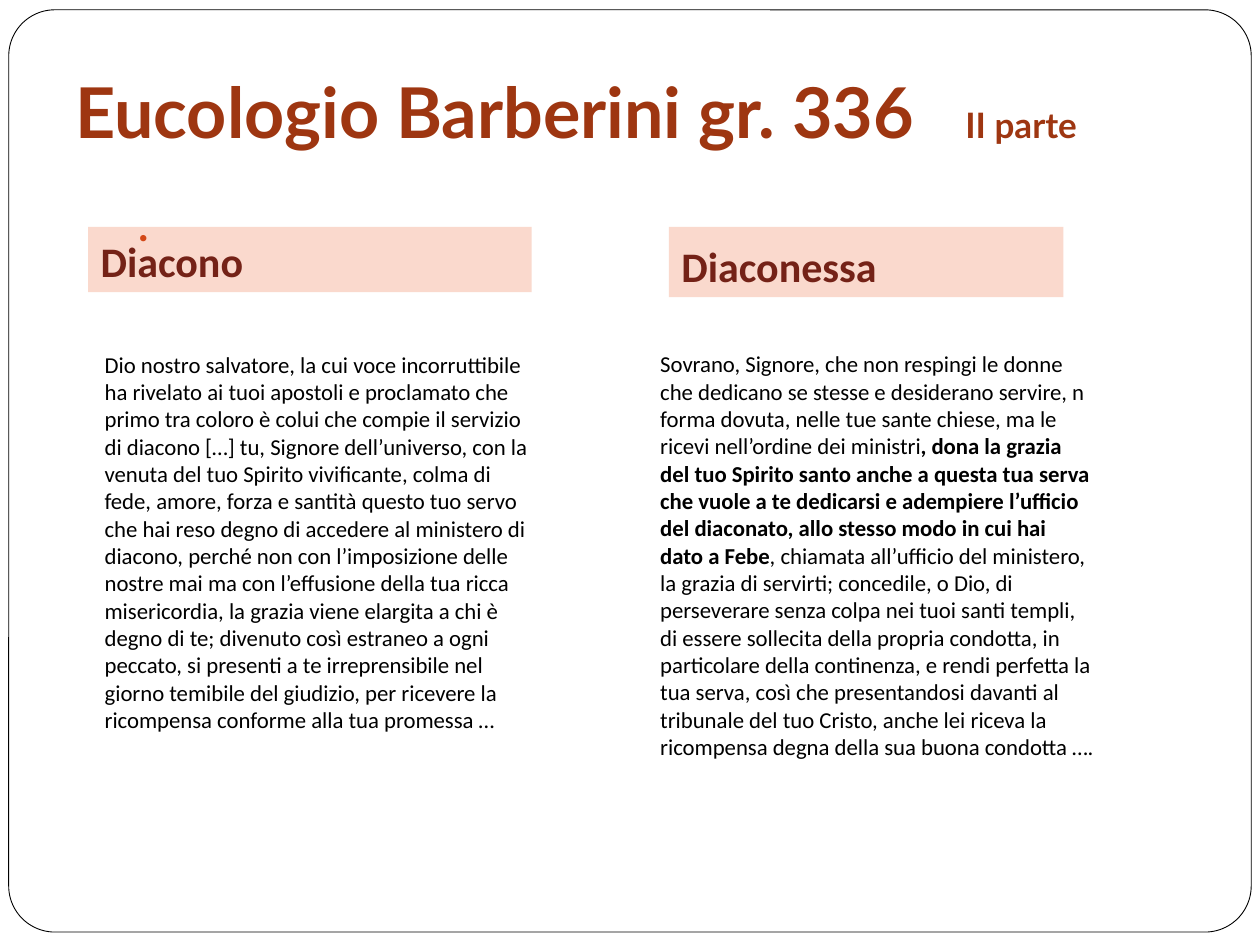
from dataclasses import dataclass

from lxml.etree import SubElement
from pptx import Presentation
from pptx.dml.color import RGBColor
from pptx.enum.shapes import MSO_SHAPE
from pptx.enum.text import MSO_ANCHOR, PP_ALIGN
from pptx.oxml.ns import qn
from pptx.util import Pt

COLORS = {
    "white": "FFFFFF",
    "black": "000000",
    "title": "9E3611",
    "heading": "742217",
    "band": "FAD9CD",
    "dot": "D34817",
}


@dataclass(frozen=True)
class Box:
    left: float
    top: float
    width: float
    height: float

    def lengths(self) -> list:
        return [Pt(v) for v in (self.left, self.top, self.width, self.height)]


@dataclass(frozen=True)
class Style:
    size: float
    color: str
    font: str = "Calibri"
    bold: bool | None = None


@dataclass(frozen=True)
class Run:
    text: str
    bold: bool | None = None
    size: float | None = None


@dataclass(frozen=True)
class Prayer:
    heading: str
    band: Box
    body: Box
    runs: list[Run]


TITLE = Style(40, "title", "Lato", True)
HEADING = Style(24, "heading", bold=True)
BODY = Style(13, "black")
DOT = Style(24, "dot", "Lato", True)

PRAYERS = [
    Prayer("Diacono", Box(50.4, 129.6, 253.4, 37.4), Box(31, 196.6, 283.7, 317.5), [
        Run("Dio nostro salvatore, la cui voce incorruttibile ha rivelato ai tuoi apostoli "
            "e proclamato che primo tra coloro è colui che compie il servizio di diacono […] "
            "tu, Signore dell’universo, con la venuta del tuo Spirito vivificante, colma di "
            "fede, amore, forza e santità questo tuo servo che hai reso degno di accedere al "
            "ministero di diacono, perché non con l’imposizione delle nostre mai ma con "
            "l’effusione della tua ricca misericordia, la grazia viene elargita a chi è degno "
            "di te; divenuto così estraneo a ogni peccato, si presenti a te irreprensibile nel "
            "giorno temibile del giudizio, per ricevere la ricompensa conforme alla tua "
            "promessa …"),
    ]),
    Prayer("Diaconessa", Box(382.3, 129.6, 225.4, 40.3), Box(348.5, 196.6, 283.7, 300.2), [
        Run("Sovrano, Signore, che non respingi le donne che dedicano se stesse e desiderano "
            "servire, n forma dovuta, nelle tue sante chiese, ma le ricevi nell’ordine dei "
            "ministri"),
        Run(", dona la grazia del tuo Spirito santo anche a questa tua serva che vuole a te "
            "dedicarsi e adempiere l’ufficio del diaconato, allo stesso modo in cui hai dato "
            "a Febe", bold=True),
        Run(", chiamata all’ufficio del ministero, la grazia di servirti; concedile, o Dio, di "
            "perseverare senza colpa nei tuoi santi templi, di essere sollecita della propria "
            "condotta, in particolare della continenza, e rendi perfetta la tua serva, così "
            "che presentandosi davanti al tribunale del tuo Cristo, anche lei riceva la "
            "ricompensa degna della sua buona condotta …."),
    ]),
]


def rgb(name: str) -> RGBColor:
    return RGBColor.from_string(COLORS[name])


def add_panel(s, kind: MSO_SHAPE, box: Box, fill: str, line: str | None = None):
    sp = s.shapes.add_shape(kind, *box.lengths())
    sp.shadow.inherit = False
    sp.fill.solid()
    sp.fill.fore_color.rgb = rgb(fill)
    if line:
        sp.line.color.rgb = rgb(line)
        sp.line.width = Pt(0.5)
    else:
        sp.line.fill.background()
    return sp


def write(sp, runs: list[Run], style: Style, anchor=MSO_ANCHOR.TOP,
          left: float = 7.2, top: float = 3.6, bottom: float = 3.6,
          tab: float | None = None) -> None:
    tf = sp.text_frame
    tf.word_wrap = True
    tf.vertical_anchor = anchor
    tf.margin_left, tf.margin_top, tf.margin_bottom = Pt(left), Pt(top), Pt(bottom)
    p = tf.paragraphs[0]
    p.alignment = PP_ALIGN.LEFT
    if tab:
        stops = SubElement(p._p.get_or_add_pPr(), qn("a:tabLst"))
        SubElement(stops, qn("a:tab"), pos=str(Pt(tab)), algn="l")
    p.font.name = style.font
    p.font.size = Pt(style.size)
    p.font.bold = style.bold
    p.font.color.rgb = rgb(style.color)
    for run in runs:
        r = p.add_run()
        r.text = run.text
        if run.bold is not None:
            r.font.bold = run.bold
        if run.size:
            r.font.size = Pt(run.size)


def add_text(s, box: Box, runs: list[Run], style: Style, **layout) -> None:
    write(s.shapes.add_textbox(*box.lengths()), runs, style, **layout)


def add_prayer(s, prayer: Prayer) -> None:
    add_text(s, prayer.body, prayer.runs, BODY, left=28.8)
    band = add_panel(s, MSO_SHAPE.RECTANGLE, prayer.band, "band")
    write(band, [Run(prayer.heading)], HEADING, anchor=MSO_ANCHOR.BOTTOM)


def main() -> None:
    prs = Presentation()
    prs.slide_width, prs.slide_height = Pt(720), Pt(540)
    s = prs.slides.add_slide(prs.slide_layouts[6])
    frame = add_panel(s, MSO_SHAPE.ROUNDED_RECTANGLE, Box(5, 5.6, 710, 527), "white", "black")
    frame.adjustments[0] = 0.05
    add_text(s, Box(36, 21.6, 594, 72.7),
             [Run("Eucologio Barberini gr. 336\t"), Run("II parte", size=20)],
             TITLE, anchor=MSO_ANCHOR.BOTTOM, bottom=7.2, tab=508.5)
    for prayer in PRAYERS:
        add_prayer(s, prayer)
    add_text(s, Box(72, 113.8, 293.8, 59.8), [Run(".")], DOT, top=0)
    prs.save("out.pptx")


if __name__ == "__main__":
    main()
